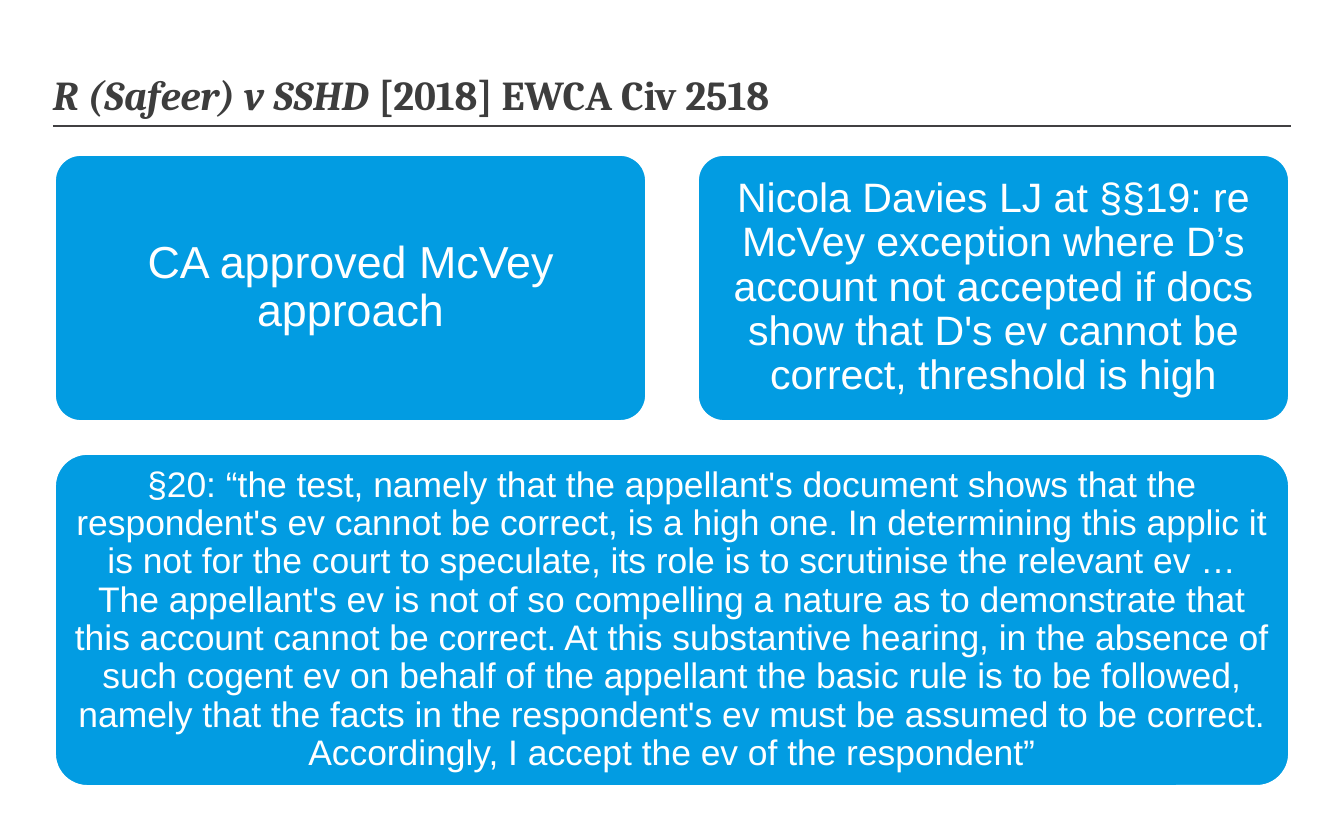
import pptx
import pptx.dml.color
import pptx.enum.shapes
import pptx.enum.text
import pptx.util
import lxml.etree

# Content
TITLE = [("R (Safeer) v SSHD ", True), ("[2018] EWCA Civ 2518", False)]
APPROACH = "CA approved McVey approach"
EXCEPTION = (
    "Nicola Davies LJ at §§19: re McVey exception where D’s account not "
    "accepted if docs show that D's ev cannot be correct, threshold is high"
)
QUOTATION = (
    "§20: “the test, namely that the appellant's document shows that the "
    "respondent's ev cannot be correct, is a high one. In determining this "
    "applic it is not for the court to speculate, its role is to scrutinise "
    "the relevant ev … The appellant's ev is not of so compelling a nature as "
    "to demonstrate that this account cannot be correct. At this substantive "
    "hearing, in the absence of such cogent ev on behalf of the appellant the "
    "basic rule is to be followed, namely that the facts in the respondent's "
    "ev must be assumed to be correct. Accordingly, I accept the ev of the "
    "respondent”"
)

# Layout in px
SLIDE_WIDTH, SLIDE_HEIGHT = 1344, 840
MARGIN = 53
RULE_Y = 126
CARDS_LEFT, CARDS_WIDTH = 54, 1236
COLUMN_GAP, ROW_GAP = 50, 31
TOP_ROW_Y, TOP_ROW_HEIGHT, BOTTOM_ROW_HEIGHT = 154, 268, 334

BLUE, WHITE, GREY, DARK = "029CE2", "FFFFFF", "414042", "3D3D3D"


def px(length):
    return pptx.util.Emu(round(length * 914400 / 134.4))


def color(value):
    return pptx.dml.color.RGBColor.from_string(value)


def write_text(frame, runs, size, font, fill, bold=False, align="LEFT",
               anchor="TOP", inset=0, line_spacing=1.0):
    """Fill a text frame with one paragraph of (text, italic) runs."""
    frame.word_wrap = True
    frame.vertical_anchor = getattr(pptx.enum.text.MSO_ANCHOR, anchor)
    for side in ("left", "top", "right", "bottom"):
        setattr(frame, f"margin_{side}", px(inset))
    paragraph = frame.paragraphs[0]
    paragraph.alignment = getattr(pptx.enum.text.PP_ALIGN, align)
    paragraph.line_spacing = line_spacing
    for text, italic in runs:
        run = paragraph.add_run()
        run.text = text
        run.font.name = font
        run.font.size = pptx.util.Pt(size)
        run.font.bold = bold
        run.font.italic = italic
        run.font.color.rgb = color(fill)


def add_card(slide, text, left, top, width, height, size, inset):
    card = slide.shapes.add_shape(
        pptx.enum.shapes.MSO_SHAPE.ROUNDED_RECTANGLE,
        px(left), px(top), px(width), px(height))
    card.adjustments[0] = 0.1
    card.shadow.inherit = False
    card.fill.solid()
    card.fill.fore_color.rgb = color(BLUE)
    card.line.color.rgb = color(WHITE)
    card.line.width = pptx.util.Pt(2)
    write_text(card.text_frame, [(text, False)], size, "Arial", WHITE,
               align="CENTER", anchor="MIDDLE", inset=inset, line_spacing=0.9)


def main():
    presentation = pptx.Presentation()
    presentation.slide_width = px(SLIDE_WIDTH)
    presentation.slide_height = px(SLIDE_HEIGHT)
    slide = presentation.slides.add_slide(presentation.slide_layouts[6])

    # Title and the rule below it
    title = slide.shapes.add_textbox(px(MARGIN), px(69), px(912), px(47))
    write_text(title.text_frame, TITLE, 22, "Cambria", DARK, bold=True)
    rule = slide.shapes.add_connector(
        pptx.enum.shapes.MSO_CONNECTOR.STRAIGHT,
        px(MARGIN), px(RULE_Y), px(SLIDE_WIDTH - MARGIN), px(RULE_Y))
    rule.line.color.rgb = color(GREY)
    rule.line.width = pptx.util.Pt(0.75)
    lxml.etree.SubElement(rule._element.spPr,
                          pptx.oxml.ns.qn("a:effectLst"))

    # Two cards side by side, then one across the full width
    column_width = (CARDS_WIDTH - COLUMN_GAP) / 2
    top_cards = [(APPROACH, 24, 13), (EXCEPTION, 22, 12)]
    for column, (text, size, inset) in enumerate(top_cards):
        left = CARDS_LEFT + column * (column_width + COLUMN_GAP)
        add_card(slide, text, left, TOP_ROW_Y, column_width, TOP_ROW_HEIGHT,
                 size, inset)
    add_card(slide, QUOTATION, CARDS_LEFT, TOP_ROW_Y + TOP_ROW_HEIGHT + ROW_GAP,
             CARDS_WIDTH, BOTTOM_ROW_HEIGHT, 19, 10)

    presentation.save("out.pptx")


if __name__ == "__main__":
    main()
